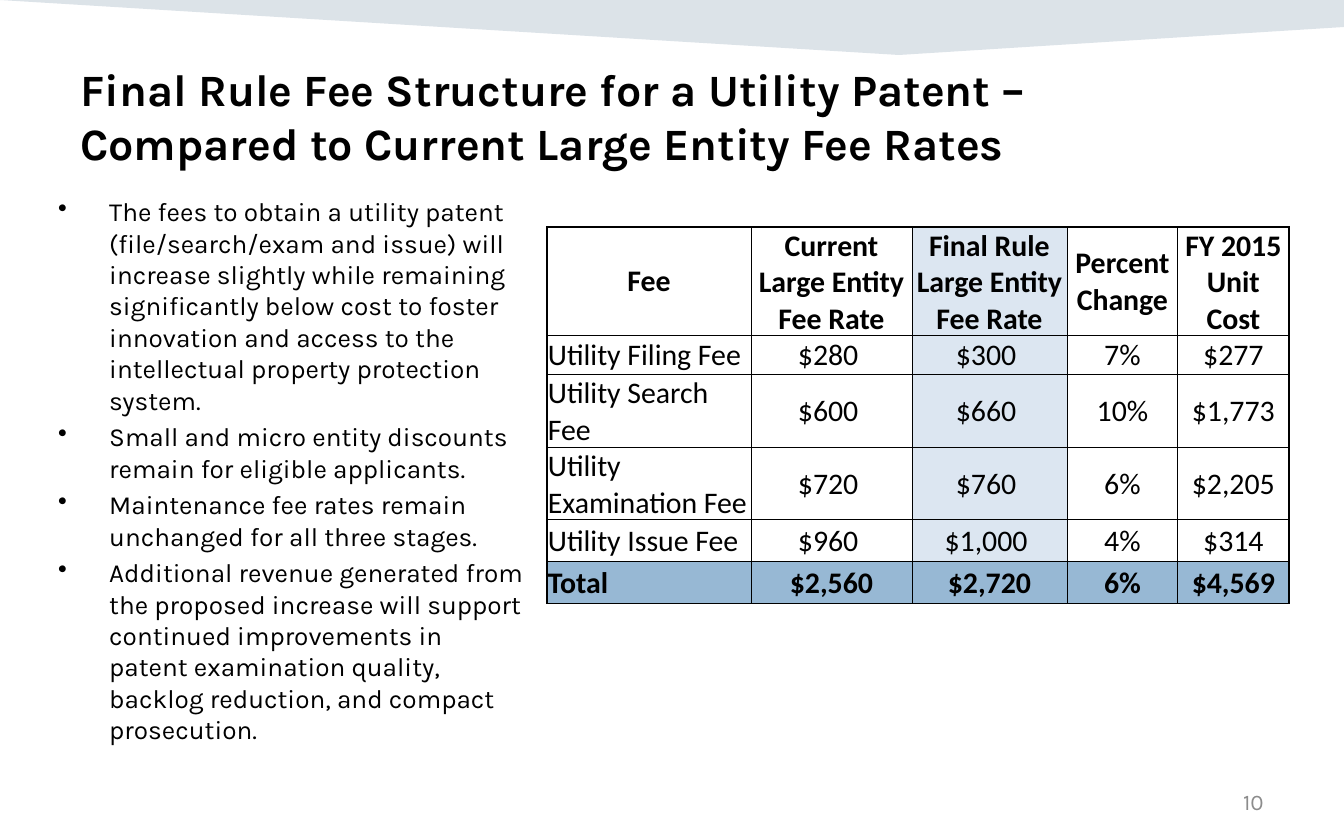
from lxml.etree import SubElement
from pptx import Presentation
from pptx.dml.color import RGBColor
from pptx.enum.text import MSO_ANCHOR as ANCHOR, PP_ALIGN as ALIGN
from pptx.oxml.ns import qn
from pptx.util import Pt

PX = 914400 / 134.4
BLACK = RGBColor(0, 0, 0)
WHITE = RGBColor(255, 255, 255)
GRAY = RGBColor(0x8C, 0x8C, 0x8C)
NAVY = RGBColor(0x16, 0x44, 0x69)
PALE_BLUE = RGBColor(0xDC, 0xE6, 0xF1)
MID_BLUE = RGBColor(0x97, 0xB8, 0xD4)

TITLE = ("Final Rule Fee Structure for a Utility Patent – \v"
         "Compared to Current Large Entity Fee Rates")
POINTS = [
    "The fees to obtain a utility patent (file/search/exam and issue) will "
    "increase slightly while remaining significantly below cost to foster "
    "innovation and access to the intellectual property protection system.",
    "Small and micro entity discounts remain for eligible applicants.",
    "Maintenance fee rates remain unchanged for all three stages.",
    "Additional revenue generated from the proposed increase will support "
    "continued improvements in patent examination quality, backlog reduction, "
    "and compact prosecution.",
]
FEES = [
    ["Fee", "Current Large Entity Fee Rate", "Final Rule Large Entity Fee Rate",
     "Percent Change", "FY 2015 Unit Cost"],
    ["Utility Filing Fee", "$280 ", "$300 ", "7%", "$277"],
    ["Utility Search Fee", "$600 ", "$660 ", "10%", "$1,773"],
    ["Utility Examination Fee", "$720 ", "$760 ", "6%", "$2,205"],
    ["Utility Issue Fee", "$960 ", "$1,000 ", "4%", "$314"],
    ["Total", "$2,560", "$2,720", "6%", "$4,569"],
]
COL_WIDTHS = [204, 161, 155, 111, 111]
ROW_HEIGHTS = [79, 39, 39, 39, 42, 42]


def px(n):
    return round(n * PX)


def set_all(obj, values):
    for name, value in values.items():
        setattr(obj, name, value)


def write(p, text, size, color=BLACK, name="Karla", bold=False):
    p.text = text
    for r in p.runs:
        set_all(r.font, {"size": Pt(size), "name": name, "bold": bold})
        r.font.color.rgb = color


def text_frame(s, box, anchor=ANCHOR.TOP):
    tf = s.shapes.add_textbox(*map(px, box)).text_frame
    set_all(tf, {"word_wrap": True, "vertical_anchor": anchor})
    return tf


def add_banner(s, box):
    x, y, w, h = box
    points = [(x + w, y), (x + w, y + h // 2), (x + w * 669 // 1000, y + h)]
    builder = s.shapes.build_freeform(px(x), px(y), scale=1.0)
    builder.add_line_segments([(px(a), px(b)) for a, b in points], close=True)
    sp = builder.convert_to_shape()
    sp.shadow.inherit = False
    sp.line.fill.background()
    sp.fill.solid()
    sp.fill.fore_color.rgb = NAVY
    color = sp.fill._xPr.find(qn("a:solidFill"))[0]
    SubElement(color, qn("a:alpha"), val="15000")


def add_title(s, box):
    write(text_frame(s, box).paragraphs[0], TITLE, 24, bold=True)


def add_page_number(s, box):
    p = text_frame(s, box, ANCHOR.MIDDLE).paragraphs[0]
    p.alignment = ALIGN.RIGHT
    write(p, "10", 12, GRAY)


def add_points(s, box):
    tf = text_frame(s, box)
    for i, text in enumerate(POINTS):
        p = tf.add_paragraph() if i else tf.paragraphs[0]
        write(p, text, 14)
        pPr = p._p.get_or_add_pPr()
        pPr.set("marL", str(px(51)))
        pPr.set("indent", str(px(-51)))
        SubElement(pPr, qn("a:buChar"), char="•")
        p.space_before = Pt(2.8)


def set_borders(cell, outer):
    """Draw black cell edges, thicker on the sides flagged in outer."""
    tcPr = cell._tc.get_or_add_tcPr()
    for side, is_outer in outer.items():
        width = Pt(1 if is_outer else 0.5)
        ln = SubElement(tcPr, qn(f"a:ln{side}"), w=str(width))
        fill = SubElement(ln, qn("a:solidFill"))
        SubElement(fill, qn("a:srgbClr"), val=str(BLACK))


def cell_color(row, col):
    if row == len(FEES) - 1:
        return MID_BLUE
    if col == 2:
        return PALE_BLUE
    return WHITE if col == 1 and row else None


def add_fee_table(s, box):
    last_row, last_col = len(FEES) - 1, len(FEES[0]) - 1
    frame = s.shapes.add_table(last_row + 1, last_col + 1, *map(px, box))
    table = frame.table
    set_all(table, {"first_row": False, "horz_banding": False})
    for column, width in zip(table.columns, COL_WIDTHS):
        column.width = px(width)
    for row, height in zip(table.rows, ROW_HEIGHTS):
        row.height = px(height)
    frame.height = px(box[3])

    for i, fees in enumerate(FEES):
        for j, text in enumerate(fees):
            cell = table.cell(i, j)
            set_all(cell, {"vertical_anchor": ANCHOR.MIDDLE,
                           "margin_left": px(1), "margin_right": px(1),
                           "margin_top": px(1), "margin_bottom": 0})
            set_borders(cell, {"L": j == 0, "R": j == last_col,
                               "T": i == 0, "B": i == last_row})
            color = cell_color(i, j)
            if color is None:
                cell.fill.background()
            else:
                cell.fill.solid()
                cell.fill.fore_color.rgb = color
            p = cell.text_frame.paragraphs[0]
            p.alignment = ALIGN.LEFT if i and j == 0 else ALIGN.CENTER
            write(p, text, 16, name="Calibri", bold=i in (0, last_row))


def main():
    prs = Presentation()
    set_all(prs, {"slide_width": px(1344), "slide_height": px(840)})
    s = prs.slides.add_slide(prs.slide_layouts[6])
    add_banner(s, (0, 0, 1344, 55))
    add_title(s, (67, 55, 1210, 134))
    add_page_number(s, (964, 780, 313, 44))
    add_points(s, (45, 189, 493, 593))
    add_fee_table(s, (547, 227, 742, 378))
    prs.save("out.pptx")


if __name__ == "__main__":
    main()
